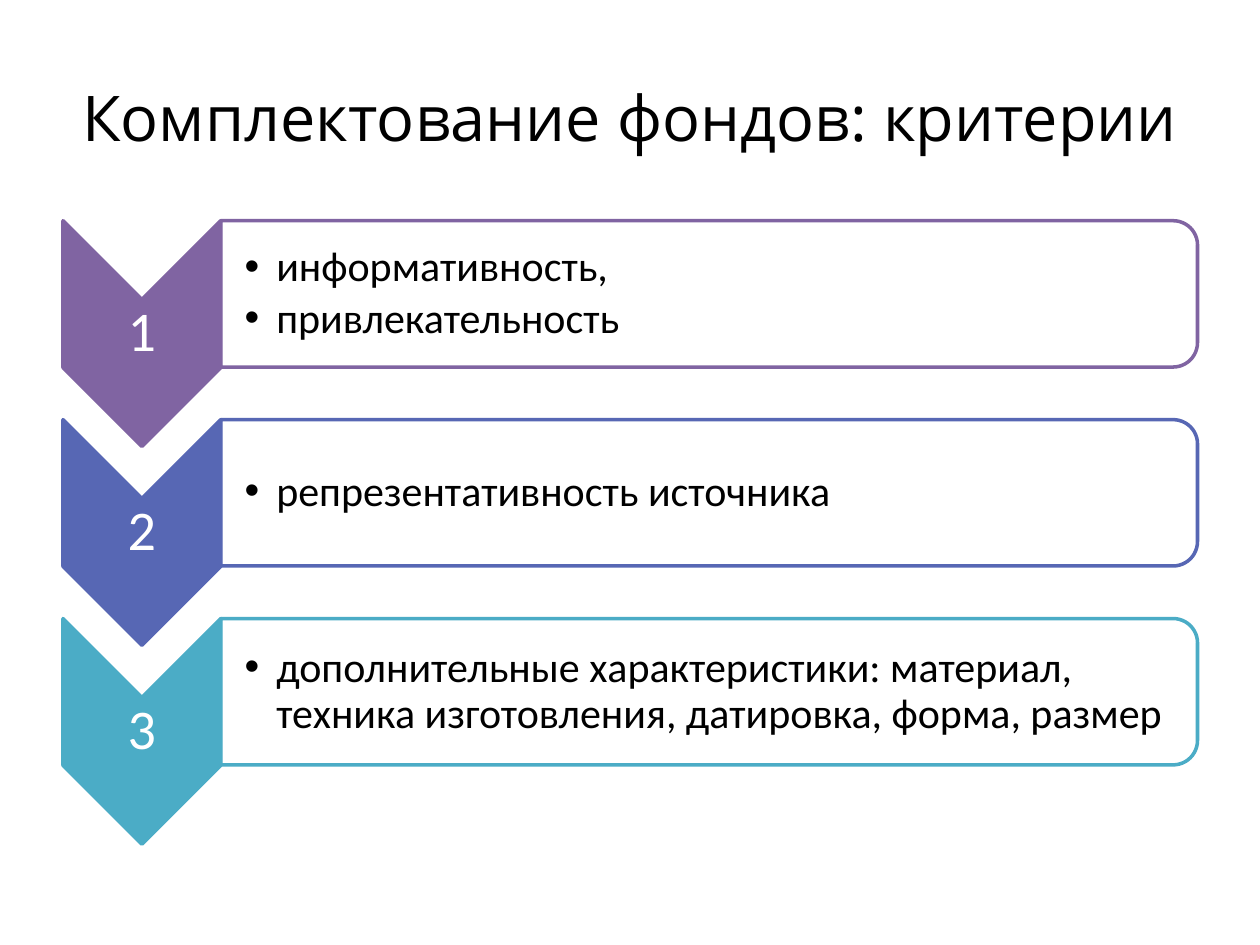
from lxml.etree import SubElement
from pptx import Presentation
from pptx.dml.color import RGBColor
from pptx.enum.shapes import MSO_SHAPE
from pptx.enum.text import MSO_ANCHOR, PP_ALIGN
from pptx.oxml.ns import qn
from pptx.util import Cm, Pt

TITLE = "Комплектование фондов: критерии"
CRITERIA = [
    ("1", "8064A2", ["информативность,", "привлекательность"]),
    ("2", "5767B4", ["репрезентативность источника"]),
    ("3", "4BACC6", ["дополнительные характеристики: материал, "
                     "техника изготовления, датировка, форма, размер"]),
]

# Lengths in centimetres
LEFT, TOP, ROW_STEP = 1.27, 4.45, 4.01
CHEVRON_WIDTH, CHEVRON_HEIGHT = 3.18, 4.55
PANEL_WIDTH, PANEL_HEIGHT = 19.69, 2.95
NUMBER_DROP, NUMBER_HEIGHT = 1.59, 1.37
ITEMS_DROP, ITEMS_WIDTH, ITEMS_HEIGHT = 0.14, 19.53, 2.67
INSET, ITEMS_INSET, BULLET_INDENT = 0.05, 0.48, 0.64


def color(hex_string):
    return RGBColor.from_string(hex_string)


def add_turned_shape(slide, preset, left, top, width, height, fill, line):
    """Add a preset turned 90° clockwise; the box is the one seen after the turn."""
    shift = (width - height) / 2
    shape = slide.shapes.add_shape(
        preset, Cm(left + shift), Cm(top - shift), Cm(height), Cm(width))
    shape.rotation = 90
    shape.shadow.inherit = False
    shape.fill.solid()
    shape.fill.fore_color.rgb = color(fill)
    shape.line.color.rgb = color(line)
    shape.line.width = Pt(2)
    return shape


def add_text(slide, box, lines, size, font, ink, align=PP_ALIGN.LEFT):
    frame = slide.shapes.add_textbox(*map(Cm, box)).text_frame
    frame.word_wrap = True
    frame.vertical_anchor = MSO_ANCHOR.MIDDLE
    frame.text = "\n".join(lines)
    for paragraph in frame.paragraphs:
        paragraph.alignment = align
        for run in paragraph.runs:
            run.font.size = Pt(size)
            run.font.name = font
            run.font.color.rgb = color(ink)
    return frame


def tighten(frame, left_inset=INSET):
    frame.margin_left = Cm(left_inset)
    frame.margin_top = frame.margin_right = frame.margin_bottom = Cm(INSET)
    for paragraph in frame.paragraphs:
        paragraph.line_spacing = 0.9


def add_bullets(frame):
    for paragraph in frame.paragraphs:
        paragraph.space_after = Pt(3.6)
        properties = paragraph._p.get_or_add_pPr()
        properties.set("marL", str(Cm(BULLET_INDENT)))
        properties.set("indent", str(-Cm(BULLET_INDENT)))
        SubElement(properties, qn("a:buFont"), typeface="Arial")
        SubElement(properties, qn("a:buChar"), char="•")


def add_criterion(slide, top, number, accent, items):
    panel_left = LEFT + CHEVRON_WIDTH
    add_turned_shape(slide, MSO_SHAPE.CHEVRON, LEFT, top,
                     CHEVRON_WIDTH, CHEVRON_HEIGHT, accent, accent)
    number_box = (LEFT, top + NUMBER_DROP, CHEVRON_WIDTH, NUMBER_HEIGHT)
    tighten(add_text(slide, number_box, [number], 32, "Calibri", "FFFFFF",
                     PP_ALIGN.CENTER))

    panel = add_turned_shape(slide, MSO_SHAPE.ROUND_2_SAME_RECTANGLE, panel_left, top,
                             PANEL_WIDTH, PANEL_HEIGHT, "FFFFFF", accent)
    panel_color = panel.fill._xPr.find(qn("a:solidFill")).find(qn("a:srgbClr"))
    SubElement(panel_color, qn("a:alpha"), val="90000")
    items_box = (panel_left, top + ITEMS_DROP, ITEMS_WIDTH, ITEMS_HEIGHT)
    items_frame = add_text(slide, items_box, items, 24, "Calibri", "000000")
    tighten(items_frame, ITEMS_INSET)
    add_bullets(items_frame)


def main():
    presentation = Presentation()
    presentation.slide_width, presentation.slide_height = Cm(25.4), Cm(19.05)
    slide = presentation.slides.add_slide(presentation.slide_layouts[6])
    add_text(slide, (1.27, 0.76, 22.86, 3.18), [TITLE], 36, "Open Sans", "000000",
             PP_ALIGN.CENTER)
    for row, criterion in enumerate(CRITERIA):
        add_criterion(slide, TOP + row * ROW_STEP, *criterion)
    presentation.save("out.pptx")


if __name__ == "__main__":
    main()
